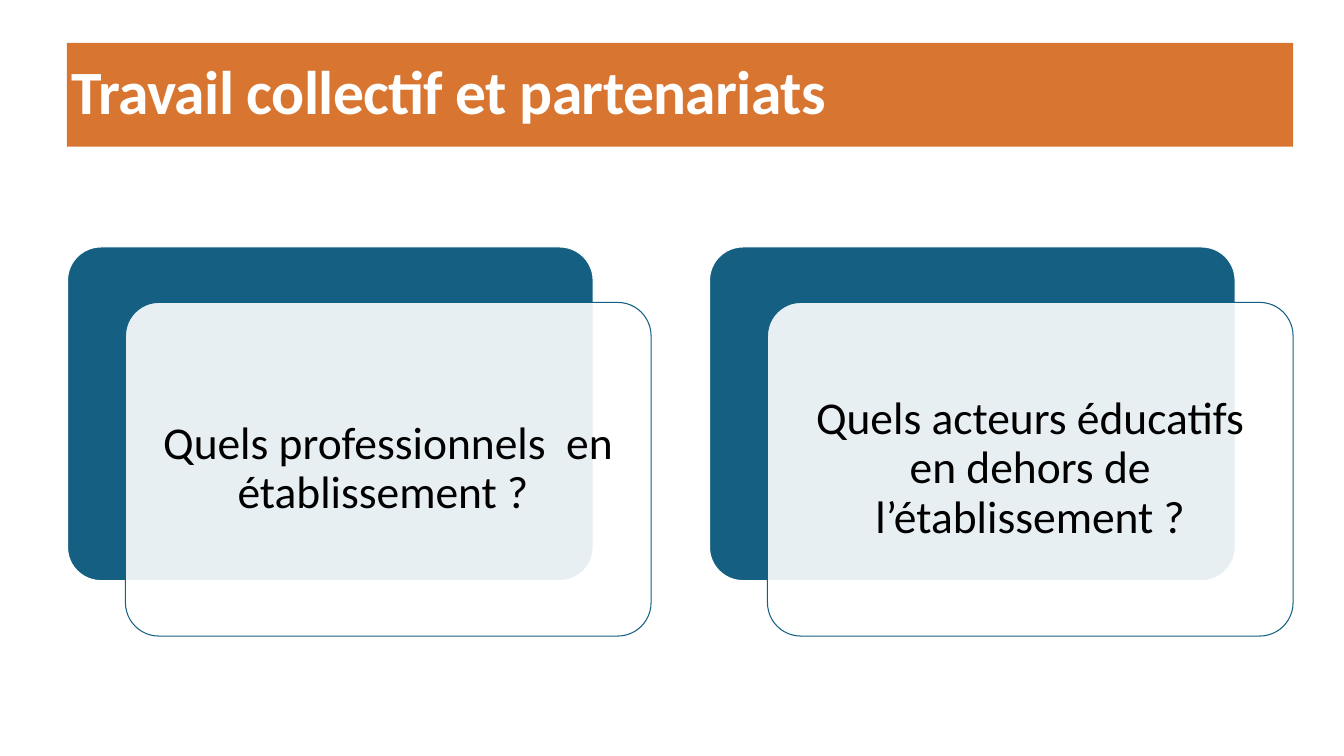
from dataclasses import dataclass

from lxml.etree import SubElement
from pptx import Presentation
from pptx.dml.color import RGBColor
from pptx.enum.shapes import MSO_SHAPE as Shape
from pptx.enum.text import MSO_ANCHOR as Anchor, PP_ALIGN as Align
from pptx.oxml.ns import qn
from pptx.util import Inches, Pt


@dataclass(frozen=True)
class Theme:
    font: str = "Calibri"
    banner: RGBColor = RGBColor(0xD8, 0x76, 0x31)
    accent: RGBColor = RGBColor(0x15, 0x60, 0x82)
    white: RGBColor = RGBColor(0xFF, 0xFF, 0xFF)
    black: RGBColor = RGBColor(0, 0, 0)
    title_size: int = 88
    question_size: int = 65


THEME = Theme()
QUESTIONS = (
    "Quels professionnels  en établissement ? ",
    "Quels acteurs éducatifs en dehors de l’établissement ?",
)
CARD_LEFT, CARD_TOP = 1.34, 4.9
CARD_WIDTH, CARD_HEIGHT = 10.43, 6.62
CARD_PITCH = 12.74
OFFSET_X, OFFSET_Y = 1.15, 1.1


def add_block(slide, preset, left, top, width, height, fill, outline=None):
    block = slide.shapes.add_shape(
        preset, Inches(left), Inches(top), Inches(width), Inches(height))
    block.shadow.inherit = False
    block.fill.solid()
    block.fill.fore_color.rgb = fill
    if outline is None:
        block.line.fill.background()
    else:
        block.line.color.rgb = outline
        block.line.width = Pt(1.5)
    return block


def add_card(slide, left, top, fill, outline):
    card = add_block(slide, Shape.ROUNDED_RECTANGLE, left, top,
                     CARD_WIDTH, CARD_HEIGHT, fill, outline)
    card.adjustments[0] = 0.1
    return card


def set_opacity(block, percent):
    colour = block.fill._xPr.find(f".//{qn('a:srgbClr')}")
    SubElement(colour, qn("a:alpha")).set("val", str(percent * 1000))


def write(block, text, size, colour, align, bold=False):
    """Put one vertically centred paragraph in the block and return its run."""
    frame = block.text_frame
    frame.word_wrap = True
    frame.vertical_anchor = Anchor.MIDDLE
    paragraph = frame.paragraphs[0]
    paragraph.alignment = align
    paragraph.line_spacing = 0.9
    run = paragraph.add_run()
    run.text = text
    run.font.name = THEME.font
    run.font.size = Pt(size)
    run.font.bold = bold
    run.font.color.rgb = colour
    return run


def add_title(slide, text):
    banner = add_block(slide, Shape.RECTANGLE, 1.33, 0.85, 24.33, 2.06, THEME.banner)
    title = write(banner, text, THEME.title_size, THEME.white, Align.LEFT, bold=True)
    title.font._element.set("spc", "-90")


def add_question(slide, left, question):
    """Draw a solid card with a translucent card, holding the question, over it."""
    add_card(slide, left, CARD_TOP, THEME.accent, THEME.white)
    front = add_card(slide, left + OFFSET_X, CARD_TOP + OFFSET_Y,
                     THEME.white, THEME.accent)
    set_opacity(front, 90)
    frame = front.text_frame
    frame.margin_left = frame.margin_right = Inches(0.27)
    frame.margin_top = frame.margin_bottom = Inches(0.27)
    write(front, question, THEME.question_size, THEME.black, Align.CENTER)


def main():
    deck = Presentation()
    deck.slide_width, deck.slide_height = Inches(26.67), Inches(15)
    slide = deck.slides.add_slide(deck.slide_layouts[6])
    add_title(slide, "Travail collectif et partenariats")
    for column, question in enumerate(QUESTIONS):
        add_question(slide, CARD_LEFT + column * CARD_PITCH, question)
    deck.save("out.pptx")


if __name__ == "__main__":
    main()
